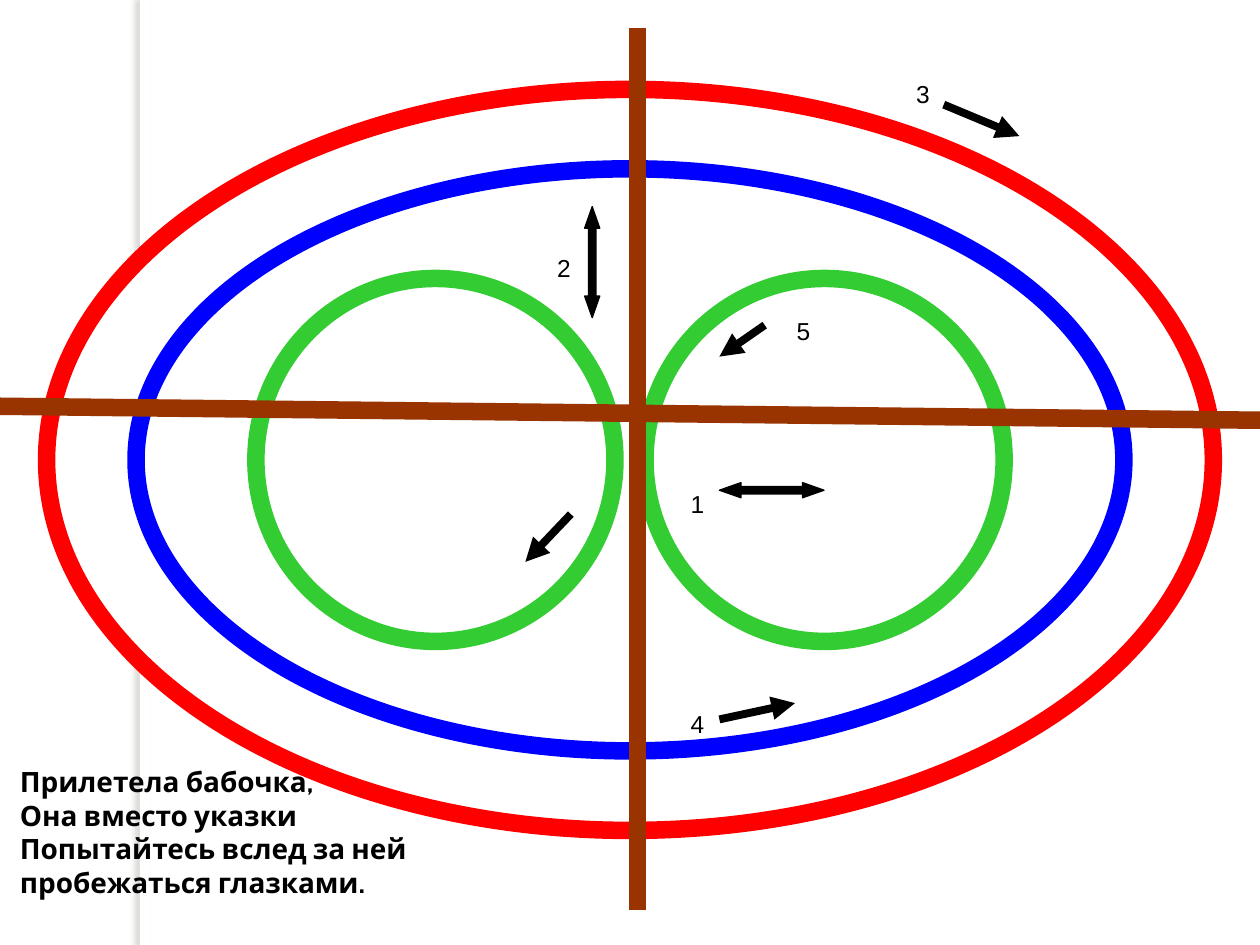
from lxml import etree
from pptx import Presentation
from pptx.dml.color import RGBColor
from pptx.enum import shapes, text
from pptx.oxml import ns
from pptx.util import Pt

COLORS = {"white": "FFFFFF", "black": "000000", "red": "FF0000", "blue": "0000FF",
          "green": "33CC33", "brown": "993300", "shadow": "736F63"}
WIDTH, HEIGHT = 720, 540

# Positions on the eye chart are offsets from its centre.
ELLIPSES = [(0, 0, 666.7, 423.4, "red"), (0, 0, 564.5, 332.6, "blue"),
            (-111.2, 0, 205.2, 207.4, "green"), (111.2, 0, 205.2, 207.4, "green")]
ARROWS = [(179.3, -203, 222.5, -185), (77, -77, 51.1, -59),
          (-33.8, 31, -59.8, 58.3), (51.1, 148.3, 94.3, 139)]
DOUBLE_ARROWS = [(-21.6, -113, 63.4, 90), (81, 17.3, 59.8, 180)]
NUMBERS = [("1", 37.8, 21.2), ("2", -38.5, -113.4), ("3", 166.7, -212.8),
           ("4", 37.8, 147.2), ("5", 98.3, -77.4)]
VERSE = [("Прилетела бабочка, ", "Она вместо указки"),
         ("Попытайтесь вслед за ней", "пробежаться глазками.")]


def color(name):
    return RGBColor.from_string(COLORS[name])


def add_effects(shape):
    return etree.SubElement(shape._element.spPr, ns.qn("a:effectLst"))


def add_filled(container, kind, box, fill, line=None, line_width=0):
    shape = container.add_shape(kind, *map(Pt, box))
    shape.shadow.inherit = False
    shape.fill.solid()
    shape.fill.fore_color.rgb = color(fill)
    if line:
        shape.line.color.rgb = color(line)
        shape.line.width = Pt(line_width)
    else:
        shape.line.fill.background()
    return shape


def add_line(container, ends, line, line_width, arrow=False):
    connector = container.add_connector(shapes.MSO_CONNECTOR.STRAIGHT, *map(Pt, ends))
    connector.line.color.rgb = color(line)
    connector.line.width = Pt(line_width)
    if arrow:
        etree.SubElement(connector.line._get_or_add_ln(), ns.qn("a:tailEnd"), type="triangle")
    add_effects(connector)


def add_run(paragraph, words, font, size, bold=False):
    run = paragraph.add_run()
    run.text = words
    run.font.name = font
    run.font.size = Pt(size)
    run.font.bold = bold
    run.font.color.rgb = color("black")


def add_side_strip(container, box):
    """White strip whose soft shadow falls to the left."""
    strip = add_filled(container, shapes.MSO_SHAPE.RECTANGLE, box, "white")
    effects = strip._element.spPr.find(ns.qn("a:effectLst"))
    shadow = etree.SubElement(effects, ns.qn("a:outerShdw"), blurRad=str(Pt(3)),
                              dist=str(Pt(3)), dir=str(180 * 60000), rotWithShape="0")
    tint = etree.SubElement(shadow, ns.qn("a:srgbClr"), val=COLORS["shadow"])
    etree.SubElement(tint, ns.qn("a:alpha"), val="25000")


def add_eye_chart(container, box):
    """Group of ellipses, direction arrows and numbers, centred in the box."""
    left, top, width, height = box
    center_x, center_y = left + width / 2, top + height / 2
    group = container.add_group_shape().shapes

    def centered(x, y, w, h):
        return center_x + x - w / 2, center_y + y - h / 2, w, h

    for x, y, w, h, line in ELLIPSES:
        add_filled(group, shapes.MSO_SHAPE.OVAL, centered(x, y, w, h), "white", line, 10)

    for x1, y1, x2, y2 in ARROWS:
        ends = center_x + x1, center_y + y1, center_x + x2, center_y + y2
        add_line(group, ends, "black", 4.5, arrow=True)

    for x, y, length, rotation in DOUBLE_ARROWS:
        arrow = add_filled(group, shapes.MSO_SHAPE.LEFT_RIGHT_ARROW,
                           centered(x, y, length, 8.64), "black", "black", 0.75)
        arrow.adjustments[0] = 0.5
        arrow.adjustments[1] = 1.42
        arrow.rotation = rotation

    for number, x, y in NUMBERS:
        label = group.add_textbox(*map(Pt, centered(x, y, 7.9, 16.6)))
        label.text_frame.word_wrap = False
        paragraph = label.text_frame.paragraphs[0]
        paragraph.alignment = text.PP_ALIGN.CENTER
        add_run(paragraph, number, "Arial", 14)


def add_cross(container, box):
    """Vertical axis down the middle and a slightly tilted horizontal one."""
    left, top, width, height = box
    axis_x = left + width / 2 + 4.3
    add_line(container, (axis_x, top + 15.8, axis_x, top + height - 20.2), "brown", 10)
    add_line(container, (left - 31.7, top + 231.8, left + width + 31.7, top + 240.5), "brown", 10)


def add_verse(container, box):
    frame = container.add_textbox(*map(Pt, box)).text_frame
    frame.word_wrap = True
    frame.auto_size = text.MSO_AUTO_SIZE.SHAPE_TO_FIT_TEXT
    frame.vertical_anchor = text.MSO_ANCHOR.MIDDLE
    for index, (first, second) in enumerate(VERSE):
        paragraph = frame.add_paragraph() if index else frame.paragraphs[0]
        add_run(paragraph, first, "Cabin", 16, bold=True)
        paragraph.add_line_break()
        add_run(paragraph, second, "Cabin", 16, bold=True)


def main():
    presentation = Presentation()
    presentation.slide_width, presentation.slide_height = Pt(WIDTH), Pt(HEIGHT)
    slide = presentation.slides.add_slide(presentation.slide_layouts[6])
    add_side_strip(slide.shapes, (80, 0, 5.8, HEIGHT))
    add_eye_chart(slide.shapes, (26.6, 51.1, 666.8, 423.4))
    add_cross(slide.shapes, (0, 0, WIDTH, HEIGHT))
    add_verse(slide.shapes, (4.3, 432.7, 423.4, 85))
    presentation.save("out.pptx")


if __name__ == "__main__":
    main()
